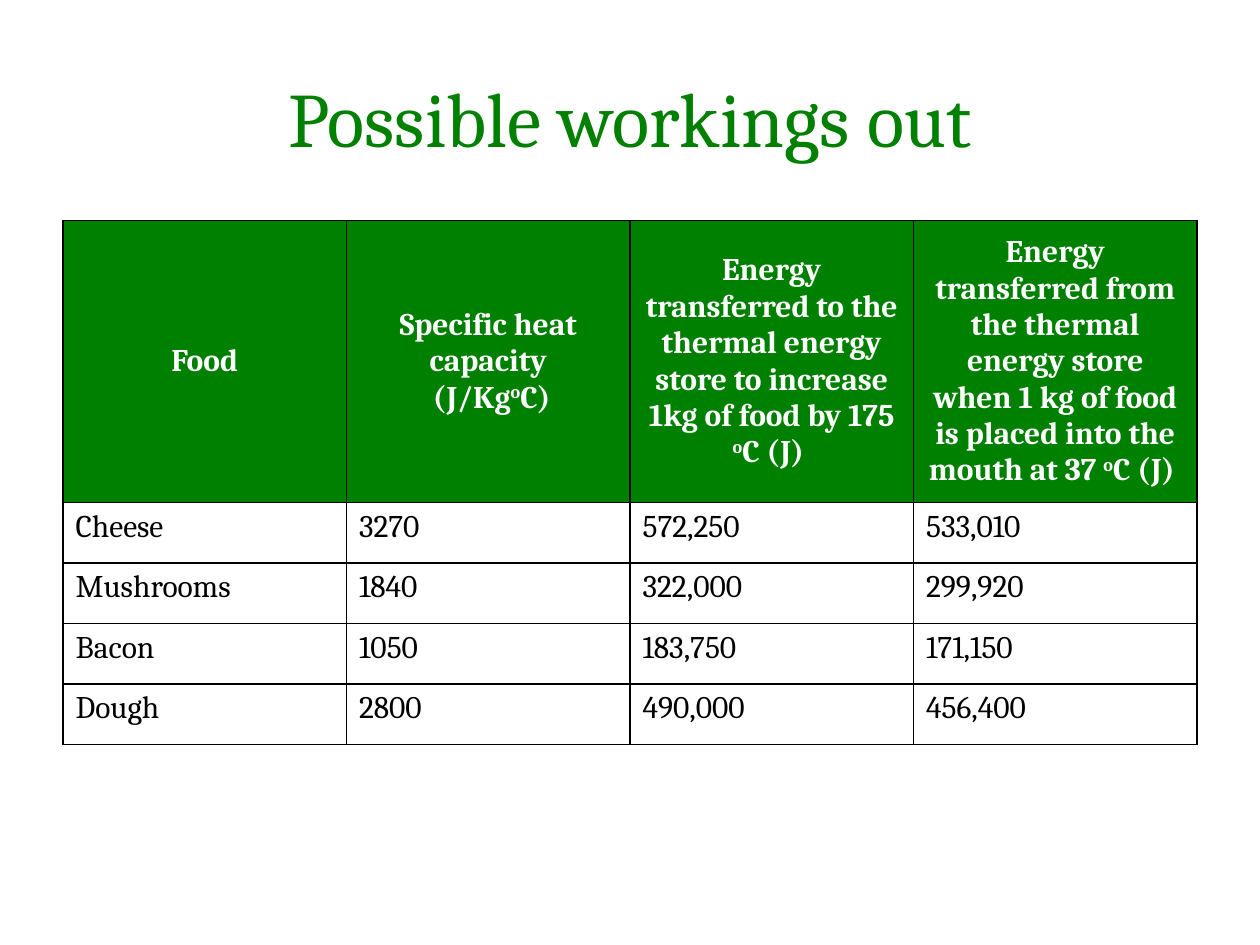
from dataclasses import dataclass

from lxml.etree import SubElement
from pptx import Presentation
from pptx.dml.color import RGBColor
from pptx.enum.text import MSO_ANCHOR as Anchor, PP_ALIGN as Align
from pptx.oxml.ns import qn
from pptx.util import Inches, Pt

GREEN = RGBColor(0x00, 0x80, 0x00)
WHITE = RGBColor(0xFF, 0xFF, 0xFF)
BLACK = RGBColor(0x00, 0x00, 0x00)
FONT = "Cambria"
SLIDE_WIDTH, SLIDE_HEIGHT = Inches(10), Inches(7.5)
MARGIN = 0.05
HEADER_HEIGHT, FOOD_HEIGHT = Inches(2.24), Inches(0.48)


@dataclass(frozen=True)
class Piece:
    text: str
    raised: bool = False


@dataclass(frozen=True)
class Style:
    size: int
    color: RGBColor
    bold: bool = False
    align: Align = Align.LEFT
    anchor: Anchor = Anchor.TOP
    fill: RGBColor = WHITE


Lines = list[list[Piece]]

TITLE = Style(44, GREEN, align=Align.CENTER, anchor=Anchor.MIDDLE)
HEADER = Style(18, WHITE, True, Align.CENTER, Anchor.MIDDLE, GREEN)
BODY = Style(18, BLACK)
DEGREE = Piece("o", raised=True)

HEADINGS: list[Lines] = [
    [[Piece("Food")]],
    [[Piece("Specific heat capacity")], [Piece(" (J/Kg"), DEGREE, Piece("C)")]],
    [[Piece("Energy transferred to the thermal energy store to increase "
            "1kg of food by 175 "), DEGREE, Piece("C (J) ")]],
    [[Piece("Energy transferred from the thermal energy store when 1 kg of food "
            "is placed into the mouth at 37 "), DEGREE, Piece("C (J) ")]],
]
FOODS = [
    ("Cheese", "3270", "572,250", "533,010"),
    ("Mushrooms", "1840", "322,000", "299,920"),
    ("Bacon", "1050", "183,750", "171,150"),
    ("Dough", "2800", "490,000", "456,400"),
]


def write(frame, lines: Lines, style: Style) -> None:
    frame.word_wrap = True
    for index, line in enumerate(lines):
        paragraph = frame.add_paragraph() if index else frame.paragraphs[0]
        paragraph.alignment = style.align
        for piece in line:
            run = paragraph.add_run()
            run.text = piece.text
            run.font.name = FONT
            run.font.size = Pt(style.size)
            run.font.bold = style.bold
            run.font.color.rgb = style.color
            if piece.raised:
                run.font._element.set("baseline", "30000")


def draw_borders(cell) -> None:
    properties = cell._tc.get_or_add_tcPr()
    for position, side in enumerate(("lnL", "lnR", "lnT", "lnB")):
        border = SubElement(properties, qn(f"a:{side}"), w=str(Pt(1)))
        fill = SubElement(border, qn("a:solidFill"))
        SubElement(fill, qn("a:srgbClr"), val=str(BLACK))
        properties.insert(position, border)


def fill_cell(cell, lines: Lines, style: Style) -> None:
    cell.fill.solid()
    cell.fill.fore_color.rgb = style.fill
    cell.vertical_anchor = style.anchor
    write(cell.text_frame, lines, style)
    draw_borders(cell)


def add_title(slide, text: str) -> None:
    title = slide.shapes.add_textbox(
        int(SLIDE_WIDTH * MARGIN), int(SLIDE_HEIGHT * 0.04),
        int(SLIDE_WIDTH * (1 - 2 * MARGIN)), Inches(1.25))
    title.text_frame.vertical_anchor = TITLE.anchor
    write(title.text_frame, [[Piece(text)]], TITLE)


def add_food_table(slide) -> None:
    rows = [(HEADINGS, HEADER, HEADER_HEIGHT)]
    rows += [([[[Piece(value)]] for value in food], BODY, FOOD_HEIGHT) for food in FOODS]
    table = slide.shapes.add_table(
        len(rows), len(HEADINGS), int(SLIDE_WIDTH * MARGIN), Inches(1.75),
        int(SLIDE_WIDTH * (1 - 2 * MARGIN)), sum(height for _, _, height in rows)).table
    for row, (entries, style, height) in zip(table.rows, rows):
        row.height = height
        for cell, lines in zip(row.cells, entries):
            fill_cell(cell, lines, style)


def main() -> None:
    presentation = Presentation()
    presentation.slide_width, presentation.slide_height = SLIDE_WIDTH, SLIDE_HEIGHT
    slide = presentation.slides.add_slide(presentation.slide_layouts[6])
    add_title(slide, "Possible workings out")
    add_food_table(slide)
    presentation.save("out.pptx")


if __name__ == "__main__":
    main()
